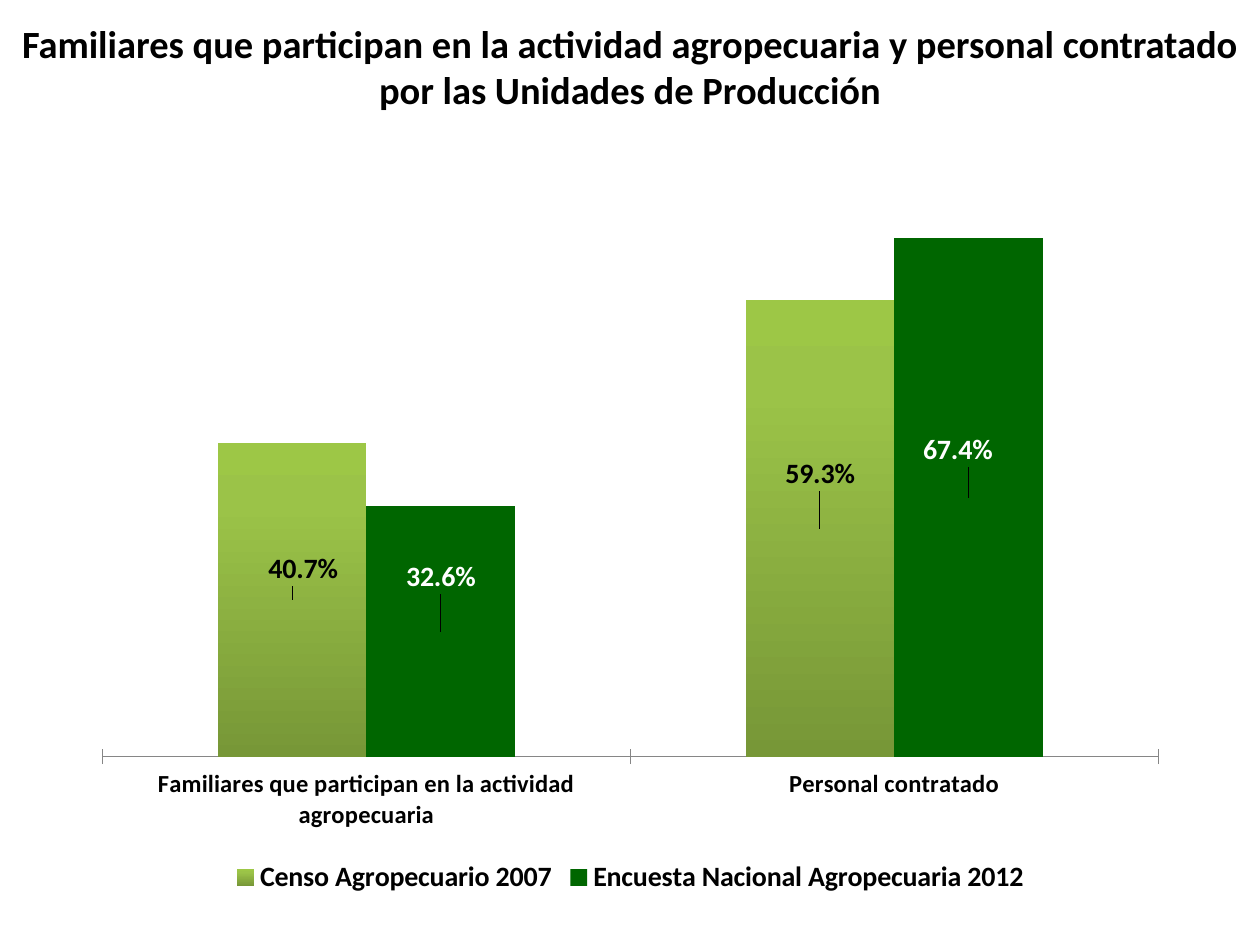
from lxml import etree
from pptx import Presentation
from pptx.chart.data import CategoryChartData
from pptx.dml.color import RGBColor
from pptx.enum.chart import XL_CHART_TYPE, XL_LABEL_POSITION, XL_LEGEND_POSITION, XL_TICK_MARK
from pptx.enum.text import MSO_ANCHOR, MSO_AUTO_SIZE, PP_ALIGN
from pptx.oxml import parse_xml
from pptx.oxml.ns import nsdecls, qn
from pptx.util import Pt

COLORS = {"black": "000000", "white": "FFFFFF", "green": "006600", "axis": "868686",
          "olive": "779737", "lime": "9BC348", "bright": "9DC746"}


def style_font(font, size, color="black"):
    font.name = "Calibri"
    font.size = Pt(size)
    font.bold = True
    font.color.rgb = RGBColor.from_string(COLORS[color])


def add_layout(anchor, **values):
    old = anchor.getnext()
    if old is not None and old.tag == qn("c:layout"):
        old.getparent().remove(old)
    layout = parse_xml(f"<c:layout {nsdecls('c')}><c:manualLayout/></c:layout>")
    for tag, value in values.items():
        etree.SubElement(layout[0], qn(f"c:{tag}")).set("val", str(value))
    anchor.addnext(layout)


prs = Presentation()
prs.slide_width, prs.slide_height = Pt(720), Pt(540)
s = prs.slides.add_slide(prs.slide_layouts[5])

title = s.shapes.title
title.left, title.top, title.width, title.height = Pt(0), Pt(8), Pt(720), Pt(60.5)
tf = title.text_frame
tf.word_wrap = True
tf.auto_size = MSO_AUTO_SIZE.SHAPE_TO_FIT_TEXT
tf.vertical_anchor = MSO_ANCHOR.TOP
p = tf.paragraphs[0]
p.text = ("Familiares que participan en la actividad agropecuaria y personal contratado "
          "por las Unidades de Producción")
p.alignment = PP_ALIGN.CENTER
style_font(p.font, 22)

data = CategoryChartData(number_format="0.0%")
data.categories = ["Familiares que participan en la actividad agropecuaria", "Personal contratado"]
data.add_series("Censo Agropecuario 2007", [0.407, 0.593])
data.add_series("Encuesta Nacional Agropecuaria 2012", [0.326, 0.674])
chart = s.shapes.add_chart(XL_CHART_TYPE.COLUMN_CLUSTERED, Pt(46), Pt(71.5), Pt(628.5), Pt(443), data).chart
chart.has_title = False
chart.font.name = "Calibri"
chart.font.size = Pt(10)
chart.font.color.rgb = RGBColor.from_string(COLORS["black"])

chart.has_legend = True
chart.legend.position = XL_LEGEND_POSITION.BOTTOM
chart.legend.include_in_layout = False
style_font(chart.legend.font, 16)

cat_axis = chart.category_axis
cat_axis.major_tick_mark = XL_TICK_MARK.CROSS
cat_axis.format.line.color.rgb = RGBColor.from_string(COLORS["axis"])
style_font(cat_axis.tick_labels.font, 14)

val_axis = chart.value_axis
val_axis.visible = False
val_axis.has_major_gridlines = False
val_axis.minimum_scale, val_axis.maximum_scale = 0, 0.8
val_axis.tick_labels.number_format = "0.0%"
val_axis.tick_labels.number_format_is_linked = False

plot = chart.plots[0]
plot.gap_width = 155
plot.overlap = 0
plot.vary_by_categories = False
plot_area = chart.element.find(".//" + qn("c:plotArea"))
for old in plot_area.findall(qn("c:layout")):
    plot_area.remove(old)
marker = etree.Element(qn("c:layout"))
plot_area.insert(0, marker)
add_layout(marker, layoutTarget="inner", xMode="edge", yMode="edge", x=0.02, y=0.02, w=0.96, h=0.795)
plot_area.remove(marker)

label_colors = ["black", "white"]
label_offsets = [[(0.01, -0.04), (0, -0.07)], [(0, -0.07), (-0.01, -0.06)]]
for series, color, offsets in zip(plot.series, label_colors, label_offsets):
    series.invert_if_negative = False
    series.format.fill.solid()
    series.format.fill.fore_color.rgb = RGBColor.from_string(COLORS["green"])
    labels = series.data_labels
    labels.show_value = True
    labels.number_format = "0.0%"
    labels.number_format_is_linked = False
    labels.position = XL_LABEL_POSITION.CENTER
    style_font(labels.font, 16, color)
    for i, (x, y) in enumerate(offsets):
        label = series.points[i].data_label
        label.position = XL_LABEL_POSITION.CENTER
        style_font(label.font, 16, color)
        add_layout(labels._element.findall(qn("c:dLbl"))[i].find(qn("c:idx")), x=x, y=y)

stops = "".join(f'<a:gs pos="{pos * 1000}"><a:srgbClr val="{COLORS[name]}"/></a:gs>'
                for pos, name in [(0, "olive"), (80, "lime"), (100, "bright")])
gradient = parse_xml(f'<a:gradFill {nsdecls("a")} rotWithShape="1"><a:gsLst>{stops}</a:gsLst>'
                     '<a:lin ang="16200000" scaled="0"/></a:gradFill>')
sp_pr = plot.series[0]._element.find(qn("c:spPr"))
sp_pr.replace(sp_pr.find(qn("a:solidFill")), gradient)

prs.save("out.pptx")
